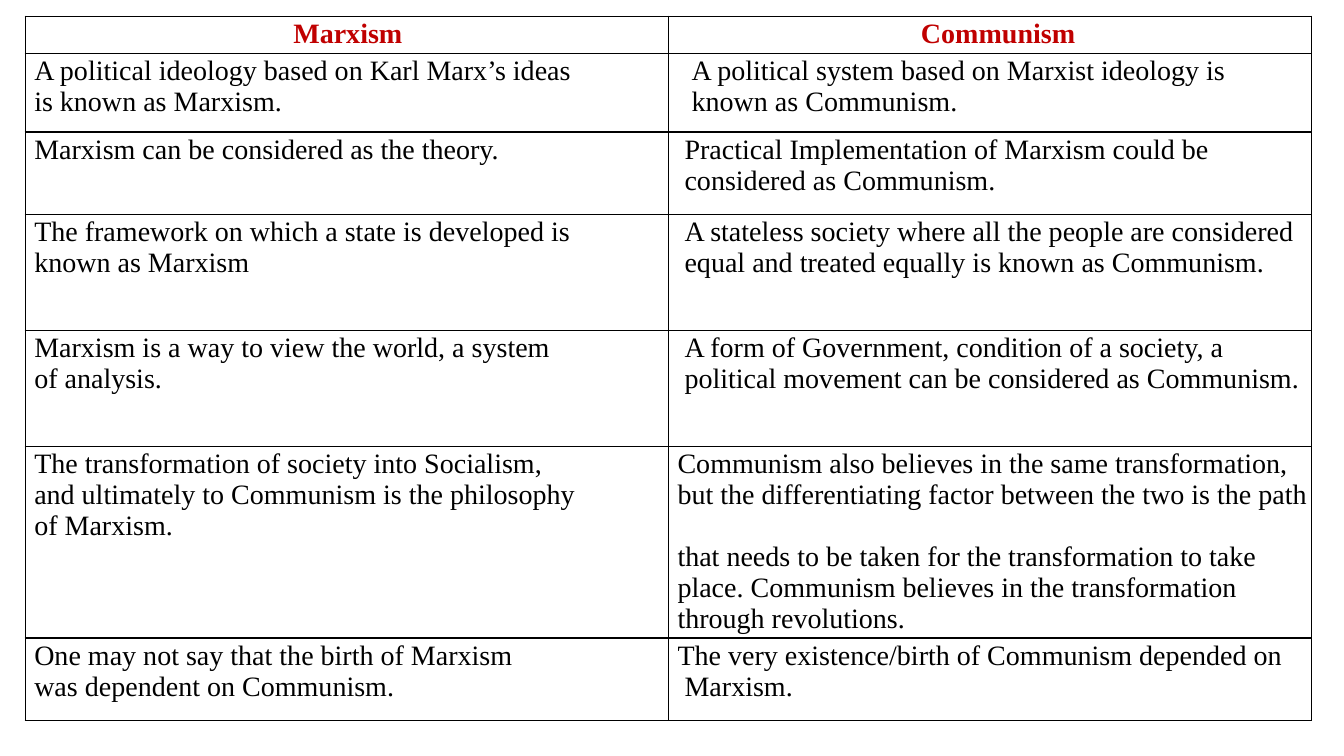
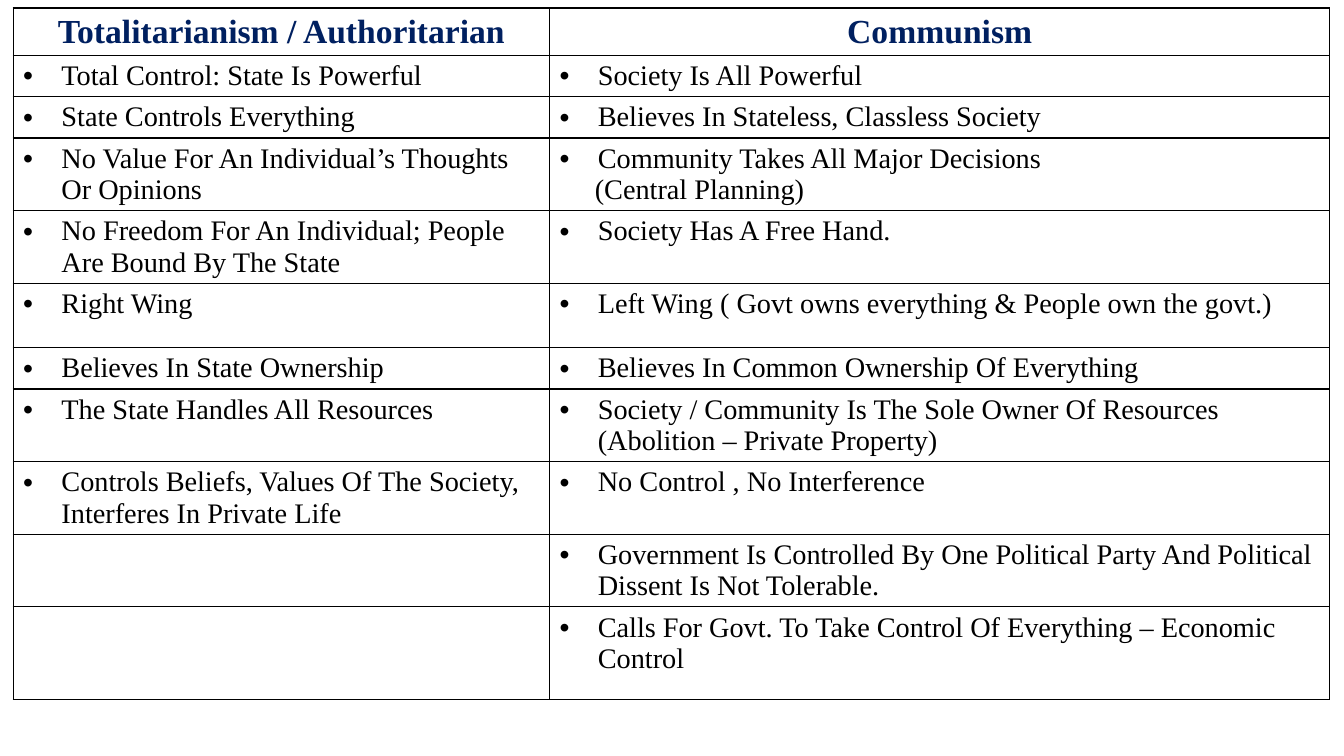
import lxml.etree
import pptx
import pptx.dml.color
import pptx.enum.shapes
import pptx.enum.text
import pptx.oxml.ns
import pptx.util

FONT = "Times New Roman"
COLORS = {"ink": "000000", "paper": "FFFFFF", "red": "C00000", "navy": "002060"}
ALIGN = pptx.enum.text.PP_ALIGN
STEP = 0.07
BULLET_INDENT = 0.38


def rgb(name):
    """Return a named colour."""
    return pptx.dml.color.RGBColor.from_string(COLORS[name])


def add_child(parent, tag, **attributes):
    """Append a drawing element with its attributes."""
    return lxml.etree.SubElement(parent, pptx.oxml.ns.qn(tag), attributes)


def add_text(frame, text, size=20, color="ink", bold=False, align=ALIGN.LEFT,
             indent=0, bullet=False, before=0):
    """Write one formatted paragraph into a text frame."""
    para = frame.add_paragraph() if frame.text else frame.paragraphs[0]
    para.alignment = align
    para.space_before = pptx.util.Pt(before)
    span = para.add_run()
    span.text = text
    span.font.name = FONT
    span.font.size = pptx.util.Pt(size)
    span.font.bold = bold
    span.font.color.rgb = rgb(color)
    properties = para._p.get_or_add_pPr()
    properties.set("marL", str(pptx.util.Inches(indent)))
    if bullet:
        properties.set("indent", str(-pptx.util.Inches(indent)))
        add_child(properties, "a:buFont", typeface="Arial")
        add_child(properties, "a:buChar", char="•")


def style_cell(cell, margins):
    """Give a cell its borders, fill and margins."""
    properties = cell._tc.get_or_add_tcPr()
    for side in ("a:lnL", "a:lnR", "a:lnT", "a:lnB"):
        border = add_child(properties, side, w=str(pptx.util.Pt(1)))
        fill = add_child(border, "a:solidFill")
        add_child(fill, "a:srgbClr", val=COLORS["ink"])
    cell.fill.solid()
    cell.fill.fore_color.rgb = rgb("paper")
    if margins:
        (cell.margin_left, cell.margin_top,
         cell.margin_right, cell.margin_bottom) = map(pptx.util.Inches, margins)


def add_comparison(page, left, top, widths, heights, rows, size, margins=None):
    """Draw a bordered table whose cells are lists of (text, format) pairs."""
    table = page.shapes.add_table(
        len(rows), len(widths), pptx.util.Inches(left), pptx.util.Inches(top),
        pptx.util.Inches(sum(widths)), pptx.util.Inches(sum(heights))).table
    table.first_row = table.horz_banding = False
    for column, width in zip(table.columns, widths):
        column.width = pptx.util.Inches(width)
    for row, height, contents in zip(table.rows, heights, rows):
        row.height = pptx.util.Inches(height)
        for cell, paragraphs in zip(row.cells, contents):
            style_cell(cell, margins)
            for text, style in paragraphs:
                add_text(cell.text_frame, text, **{"size": size, **style})


def add_line(page, start, end, width):
    """Draw a plain straight line."""
    line = page.shapes.add_connector(
        pptx.enum.shapes.MSO_CONNECTOR.STRAIGHT,
        *map(pptx.util.Inches, (*start, *end)))
    line.line.color.rgb = rgb("ink")
    line.line.width = pptx.util.Pt(width)
    add_child(line._element.spPr, "a:effectLst")


def heading(text, color, size, indent=0):
    """Return the content of a header cell."""
    return [(text, {"color": color, "size": size, "bold": True,
                    "align": ALIGN.CENTER, "indent": indent})]


def lines(*texts, steps=1):
    """Return justified lines, indented by a number of steps."""
    return [(text, {"align": ALIGN.JUSTIFY, "indent": steps * STEP}) for text in texts]


def bullet(text):
    """Return the content of a bulleted cell, empty if there is no text."""
    return [(text, {"indent": BULLET_INDENT, "bullet": True})] if text else []


def build_marxism(page):
    """Build the slide that compares Marxism and Communism."""
    left, top, width = 0.25, 0.16, 6.38
    heights = [0.37, 0.78, 0.82, 1.15, 1.15, 1.9, 0.82]
    transformation = lines(
        "Communism also believes in the same transformation,",
        "but the differentiating factor between the two is the path",
        "that needs to be taken for the transformation to take",
        "place. Communism believes in the transformation",
        "through revolutions.")
    transformation[2][1]["before"] = 22
    rows = [
        (heading("Marxism", "red", 20), heading("Communism", "red", 20, 2 * STEP)),
        (lines("A political ideology based on Karl Marx’s ideas", "is known as Marxism."),
         lines("A political system based on Marxist ideology is",
               "known as Communism.", steps=3)),
        (lines("Marxism can be considered as the theory."),
         lines("Practical Implementation of Marxism could be",
               "considered as Communism.", steps=2)),
        (lines("The framework on which a state is developed is", "known as Marxism"),
         lines("A stateless society where all the people are considered",
               "equal and treated equally is known as Communism.", steps=2)),
        (lines("Marxism is a way to view the world, a system", "of analysis."),
         lines("A form of Government, condition of a society, a",
               "political movement can be considered as Communism.", steps=2)),
        (lines("The transformation of society into Socialism,",
               "and ultimately to Communism is the philosophy", "of Marxism."),
         transformation),
        (lines("One may not say that the birth of Marxism", "was dependent on Communism."),
         lines("The very existence/birth of Communism depended on")
         + lines("Marxism.", steps=2)),
    ]
    add_comparison(page, left, top, [width, width], heights, rows, 20,
                   margins=(0.02, 0.02, 0, 0.02))
    middle = left + width
    add_line(page, (middle, top), (middle, top + sum(heights)), 0.5)


def build_totalitarianism(page):
    """Build the slide that compares Totalitarianism and Communism."""
    one_line, two_lines = 0.36, 0.64
    heights = ([0.42] + [one_line] * 2 + [two_lines] * 3 + [one_line]
               + [two_lines] * 3 + [0.92])
    pairs = [
        ("Total Control: State Is Powerful", "Society Is All Powerful"),
        ("State Controls Everything", "Believes In Stateless, Classless Society"),
        ("No Value For An Individual’s Thoughts Or Opinions",
         "Community Takes All Major Decisions"),
        ("No Freedom For An Individual; People Are Bound By The State",
         "Society Has A Free Hand."),
        ("Right Wing", "Left Wing ( Govt owns everything & People own the govt.)"),
        ("Believes In State Ownership", "Believes In Common Ownership Of Everything"),
        ("The State Handles All Resources",
         "Society / Community Is The Sole Owner Of Resources (Abolition – Private Property)"),
        ("Controls Beliefs, Values Of The Society, Interferes In Private Life",
         "No Control , No Interference"),
        ("", "Government Is Controlled By One Political Party And Political "
             "Dissent Is Not Tolerable."),
        ("", "Calls For Govt. To Take Control Of Everything – Economic Control"),
    ]
    rows = [(heading("Totalitarianism / Authoritarian", "navy", 24),
             heading("Communism", "navy", 24))]
    rows += [tuple(map(bullet, pair)) for pair in pairs]
    rows[3][1].append(("(Central Planning)", {"indent": 5 * STEP}))
    add_comparison(page, 0.13, 0.08, [5.32, 7.74], heights, rows, 20.2)


def main():
    """Build and save the deck."""
    deck = pptx.Presentation()
    deck.slide_width = pptx.util.Inches(13.33)
    deck.slide_height = pptx.util.Inches(7.5)
    for build in (build_marxism, build_totalitarianism):
        build(deck.slides.add_slide(deck.slide_layouts[6]))
    deck.save("out.pptx")


if __name__ == "__main__":
    main()
